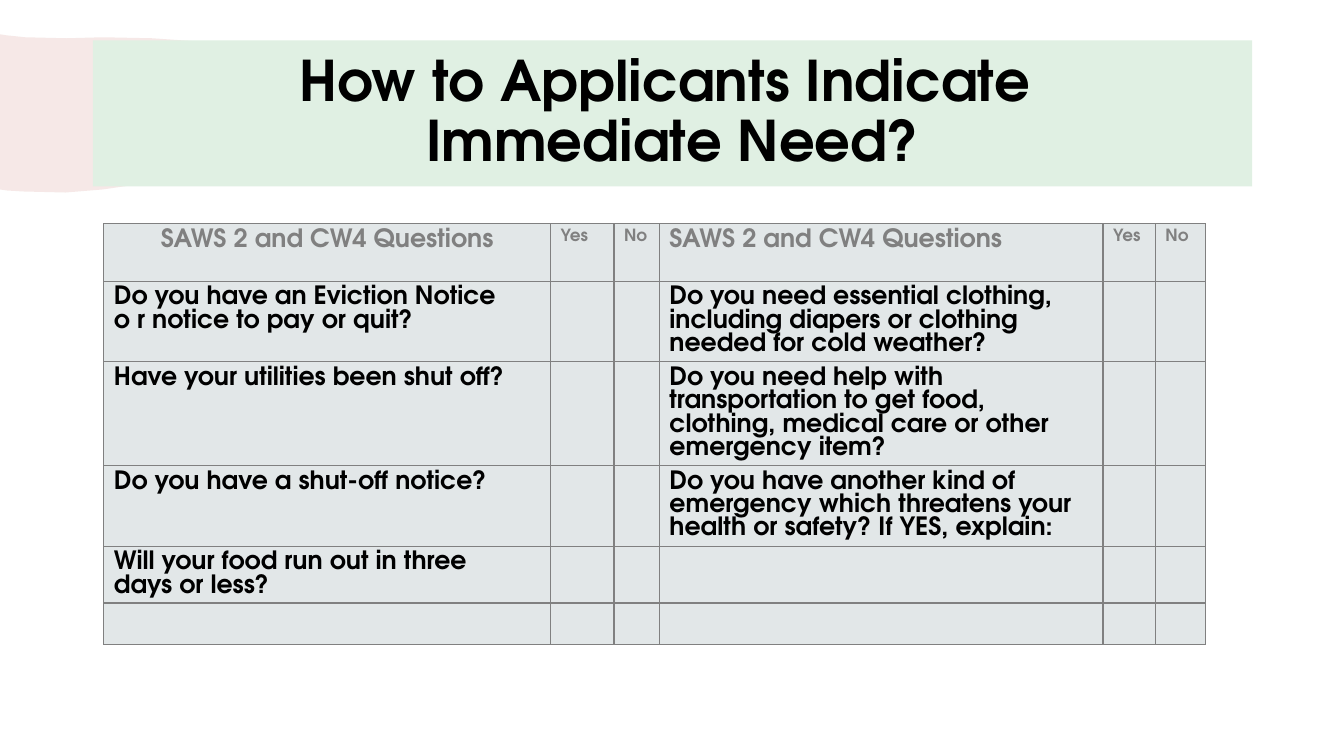
from lxml import etree
from pptx import Presentation
from pptx.dml.color import RGBColor
from pptx.enum.text import MSO_ANCHOR as Anchor, MSO_AUTO_SIZE as Auto, PP_ALIGN as Align
from pptx.oxml import parse_xml
from pptx.oxml.ns import nsdecls, qn
from pptx.util import Inches, Pt

FONT = "TeX Gyre Adventor"
COLORS = {"mint": "E0F0E3", "blush": "D39089", "cell": "E2E7E8",
          "gray": "808080", "black": "000000"}
COLS = [4.43, 0.63, 0.45, 4.4, 0.52, 0.5]
ROWS = [0.57, 0.8, 1.02, 0.8, 0.56, 0.41]
HEAD = "SAWS 2 and CW4 Questions"
ASKS = [
    ("Do you have an Eviction Notice\no r notice to pay or quit?",
     "Do you need essential clothing,\nincluding diapers or clothing\nneeded for cold weather?"),
    ("Have your utilities been shut off?",
     "Do you need help with transportation to get food, "
     "clothing, medical care or other emergency item?"),
    ("Do you have a shut-off notice?",
     "Do you have another kind of\nemergency which threatens your\n"
     "health or safety? If YES, explain:"),
    ("Will your food run out in three\ndays or less?", ""),
    ("", ""),
]
BRUSH = [
    (0, 0.34), (0.06, 0.35), (0.25, 0.37), (0.66, 0.38), (1.02, 0.37),
    (1.51, 0.38), (1.94, 0.41), (2.48, 0.41), (2.8, 0.47), (2.55, 0.54),
    (2.62, 0.62), (2.38, 0.66), (2.56, 0.7), (2.75, 0.74), (2.51, 0.75),
    (2.73, 0.81), (2.9, 0.85), (2.63, 0.88), (3.3, 0.94), (3.21, 0.97),
    (3.18, 1.06), (3.07, 1.11), (2.83, 1.16), (2.8, 1.2), (2.74, 1.28),
    (3.08, 1.28), (2.69, 1.38), (2.73, 1.42), (2.52, 1.48), (2.63, 1.48),
    (1.97, 1.72), (1.5, 1.81), (1.02, 1.88), (0.65, 1.91), (0.23, 1.9),
    (0.07, 1.89), (0, 1.88),
]


def rgb(name):
    return RGBColor.from_string(COLORS[name])


def paint(item, color):
    item.fill.solid()
    item.fill.fore_color.rgb = rgb(color)


def write(frame, text, size=18, color="black", align=Align.LEFT, gap=1.0):
    """Fill a frame; each newline starts a paragraph, each \\v a line break."""
    frame.text = text
    for para in frame.paragraphs:
        para.alignment = align
        para.line_spacing = gap
        para.space_before = Pt(0)
        for run in para.runs:
            font = run.font
            font.name, font.size, font.bold = FONT, Pt(size), True
            font.color.rgb = rgb(color)


def add_title(slide):
    title = slide.shapes.title
    title.left, title.top = Inches(0.92), Inches(0.4)
    title.width, title.height = Inches(11.5), Inches(1.45)
    paint(title, "mint")
    frame = title.text_frame
    write(frame, "How to Applicants Indicate \vImmediate Need?",
          size=40, align=Align.CENTER, gap=0.9)
    frame.auto_size = Auto.NONE
    frame.word_wrap = True
    frame.vertical_anchor = Anchor.MIDDLE
    return title


def add_brush(slide, title):
    """Draw the pale brush stroke behind the title."""
    pts = [(Inches(x), Inches(y)) for x, y in BRUSH]
    pen = slide.shapes.build_freeform(*pts[0])
    pen.add_line_segments(pts[1:], close=True)
    brush = pen.convert_to_shape()
    brush.shadow.inherit = False
    brush.line.fill.background()
    paint(brush, "blush")
    tone = brush.element.spPr.find(qn("a:solidFill"))[0]
    etree.SubElement(tone, qn("a:alpha"), val="20000")
    title.element.addprevious(brush.element)


def add_edges(cell):
    props = cell._tc.get_or_add_tcPr()
    for side in "LRTB":
        props.append(parse_xml(
            f'<a:ln{side} {nsdecls("a")} w="12700"><a:solidFill>'
            f'<a:srgbClr val="{COLORS["gray"]}"/></a:solidFill></a:ln{side}>'))


def add_grid(slide):
    grid = slide.shapes.add_table(
        len(ROWS), len(COLS), Inches(1.03), Inches(2.22),
        Inches(sum(COLS)), Inches(sum(ROWS))).table
    for col, width in zip(grid.columns, COLS):
        col.width = Inches(width)
    for row, height in zip(grid.rows, ROWS):
        row.height = Inches(height)
    for cell in grid.iter_cells():
        add_edges(cell)
        paint(cell, "cell")
    for i, text in enumerate([HEAD, "Yes", "No"] * 2):
        write(grid.cell(0, i).text_frame, text, color="gray",
              size=18 if text == HEAD else 12,
              align=Align.LEFT if i else Align.CENTER)
    for r, pair in enumerate(ASKS, 1):
        for c, text in zip((0, 3), pair):
            if text:
                write(grid.cell(r, c).text_frame, text)


def main():
    deck = Presentation()
    deck.slide_width, deck.slide_height = Inches(13.33), Inches(7.5)
    slide = deck.slides.add_slide(deck.slide_layouts[5])
    title = add_title(slide)
    add_brush(slide, title)
    add_grid(slide)
    deck.save("out.pptx")


if __name__ == "__main__":
    main()
